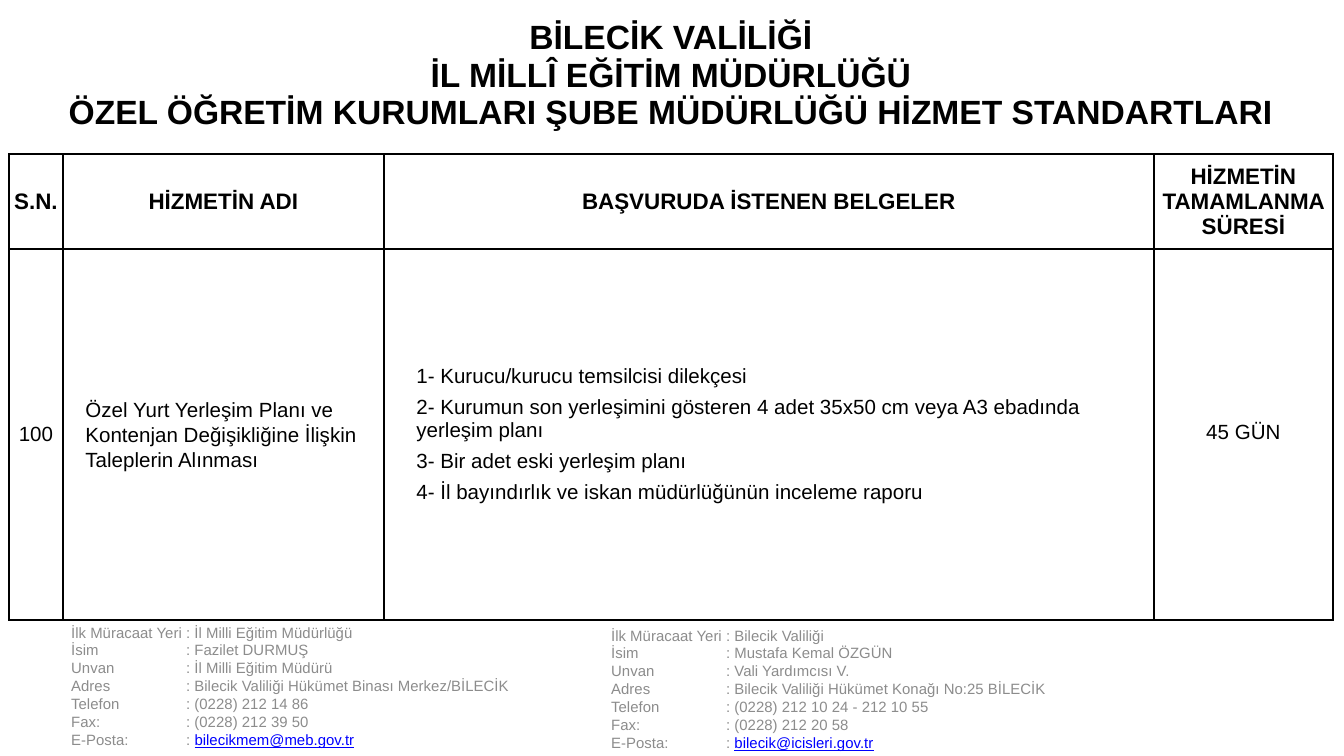
from dataclasses import dataclass

from lxml.etree import SubElement
from pptx import Presentation
from pptx.dml.color import RGBColor
from pptx.enum.text import MSO_ANCHOR as Anchor, PP_ALIGN as Align
from pptx.oxml.ns import qn
from pptx.util import Emu, Pt

BLACK = RGBColor(0x00, 0x00, 0x00)
GRAY = RGBColor(0x8C, 0x8C, 0x8C)
BLUE = RGBColor(0x00, 0x00, 0xFF)
FONT = "Arial"
PIXELS_PER_INCH = 134.4
COLUMN_WIDTHS = (54, 321, 770, 179)
ROW_HEIGHTS = (157, 95, 371)
LABEL_WIDTH = 115
ALL_SIDES = ("lnL", "lnR", "lnT", "lnB")


@dataclass(frozen=True)
class Contact:
    left: int
    top: int
    lines: tuple[tuple[str, str], ...]
    email: str


@dataclass(frozen=True)
class CellText:
    lines: tuple[str, ...]
    size: int
    bold: bool = False
    align: Align = Align.CENTER
    padded: bool = False
    indent: int = 0
    gap: float = 0
    spacing: float | Pt | None = None


CONTACTS = (
    Contact(58, 621, (
        ("İlk Müracaat Yeri", "İl Milli Eğitim Müdürlüğü"),
        ("İsim", "Fazilet DURMUŞ"),
        ("Unvan", "İl Milli Eğitim Müdürü"),
        ("Adres", "Bilecik Valiliği Hükümet Binası Merkez/BİLECİK"),
        ("Telefon", "(0228) 212 14 86"),
        ("Fax:", "(0228) 212 39 50"),
    ), "bilecikmem@meb.gov.tr"),
    Contact(598, 624, (
        ("İlk Müracaat Yeri", "Bilecik Valiliği"),
        ("İsim", "Mustafa Kemal ÖZGÜN"),
        ("Unvan", "Vali Yardımcısı V."),
        ("Adres", "Bilecik Valiliği Hükümet Konağı No:25 BİLECİK"),
        ("Telefon", "(0228) 212 10 24 - 212 10 55"),
        ("Fax:", "(0228) 212 20 58"),
    ), "bilecik@icisleri.gov.tr"),
)

TITLE = CellText((
    "BİLECİK VALİLİĞİ",
    "İL MİLLÎ EĞİTİM MÜDÜRLÜĞÜ",
    "ÖZEL ÖĞRETİM KURUMLARI ŞUBE MÜDÜRLÜĞÜ HİZMET STANDARTLARI",
), 18, bold=True)
HEADERS = tuple(CellText((text,), 12, bold=True) for text in (
    "S.N.", "HİZMETİN ADI", "BAŞVURUDA İSTENEN BELGELER",
    "HİZMETİN TAMAMLANMA SÜRESİ",
))
SERVICE = (
    CellText(("100",), 11),
    CellText(
        ("Özel Yurt Yerleşim Planı ve Kontenjan Değişikliğine "
         "İlişkin Taleplerin Alınması",),
        11, align=Align.LEFT, padded=True, indent=9, spacing=1.1),
    CellText((
        "1- Kurucu/kurucu temsilcisi dilekçesi",
        "2- Kurumun son yerleşimini gösteren 4 adet 35x50 cm veya A3 "
        "ebadında yerleşim planı",
        "3- Bir adet eski yerleşim planı",
        "4- İl bayındırlık ve iskan müdürlüğünün inceleme raporu",
    ), 11, align=Align.LEFT, padded=True, indent=19, gap=4.5),
    CellText(("45 GÜN",), 11, padded=True, spacing=Pt(10)),
)


def px(length: int) -> Emu:
    return Emu(round(length * 914400 / PIXELS_PER_INCH))


def add_span(para, text: str, size: int, color: RGBColor,
             bold: bool = False, underline: bool = False) -> None:
    span = para.add_run()
    span.text = text
    span.font.name = FONT
    span.font.size = Pt(size)
    span.font.bold = bold
    span.font.underline = underline
    span.font.color.rgb = color


def next_para(frame, index: int):
    return frame.paragraphs[0] if index == 0 else frame.add_paragraph()


def add_contact(page, contact: Contact) -> None:
    box = page.shapes.add_textbox(
        px(contact.left), px(contact.top), px(634), px(134))
    frame = box.text_frame
    frame.word_wrap = True
    frame.vertical_anchor = Anchor.BOTTOM
    for index, (label, value) in enumerate(contact.lines + (("E-Posta:", ""),)):
        para = next_para(frame, index)
        tabs = SubElement(para._p.get_or_add_pPr(), qn("a:tabLst"))
        SubElement(tabs, qn("a:tab"), pos=str(px(LABEL_WIDTH)), algn="l")
        add_span(para, f"{label}\t: {value}", 8, GRAY)
    add_span(para, contact.email, 8, BLUE, underline=True)


def add_borders(cell, sides: tuple[str, ...]) -> None:
    properties = cell._tc.get_or_add_tcPr()
    for side in sides:
        line = SubElement(properties, qn(f"a:{side}"), w=str(Pt(1)))
        fill = SubElement(line, qn("a:solidFill"))
        SubElement(fill, qn("a:srgbClr"), val=str(BLACK))


def fill_cell(cell, content: CellText) -> None:
    cell.vertical_anchor = Anchor.MIDDLE
    if not content.padded:
        cell.margin_left = cell.margin_right = 0
        cell.margin_top = cell.margin_bottom = 0
    for index, text in enumerate(content.lines):
        para = next_para(cell.text_frame, index)
        para.alignment = content.align
        if content.spacing is not None:
            para.line_spacing = content.spacing
        if content.gap and index > 0:
            para.space_before = Pt(content.gap)
        if content.indent:
            properties = para._p.get_or_add_pPr()
            properties.set("marL", str(px(content.indent)))
            properties.set("indent", "0")
        add_span(para, text, content.size, BLACK, content.bold)


def add_service_table(page) -> None:
    table = page.shapes.add_table(
        len(ROW_HEIGHTS), len(COLUMN_WIDTHS), px(9), px(-3),
        px(sum(COLUMN_WIDTHS)), px(sum(ROW_HEIGHTS))).table
    table.first_row = False
    table.horz_banding = False
    for column, width in zip(table.columns, COLUMN_WIDTHS):
        column.width = px(width)
    for index, (row, height) in enumerate(zip(table.rows, ROW_HEIGHTS)):
        row.height = px(height)
        for cell in row.cells:
            add_borders(cell, ALL_SIDES if index else ("lnB",))
            cell.fill.background()
    table.cell(0, 0).merge(table.cell(0, len(COLUMN_WIDTHS) - 1))
    fill_cell(table.cell(0, 0), TITLE)
    for row_index, contents in enumerate((HEADERS, SERVICE), start=1):
        for column_index, content in enumerate(contents):
            fill_cell(table.cell(row_index, column_index), content)


def main() -> None:
    deck = Presentation()
    deck.slide_width = px(1344)
    deck.slide_height = px(756)
    page = deck.slides.add_slide(deck.slide_layouts[6])
    for contact in CONTACTS:
        add_contact(page, contact)
    add_service_table(page)
    deck.save("out.pptx")


if __name__ == "__main__":
    main()
